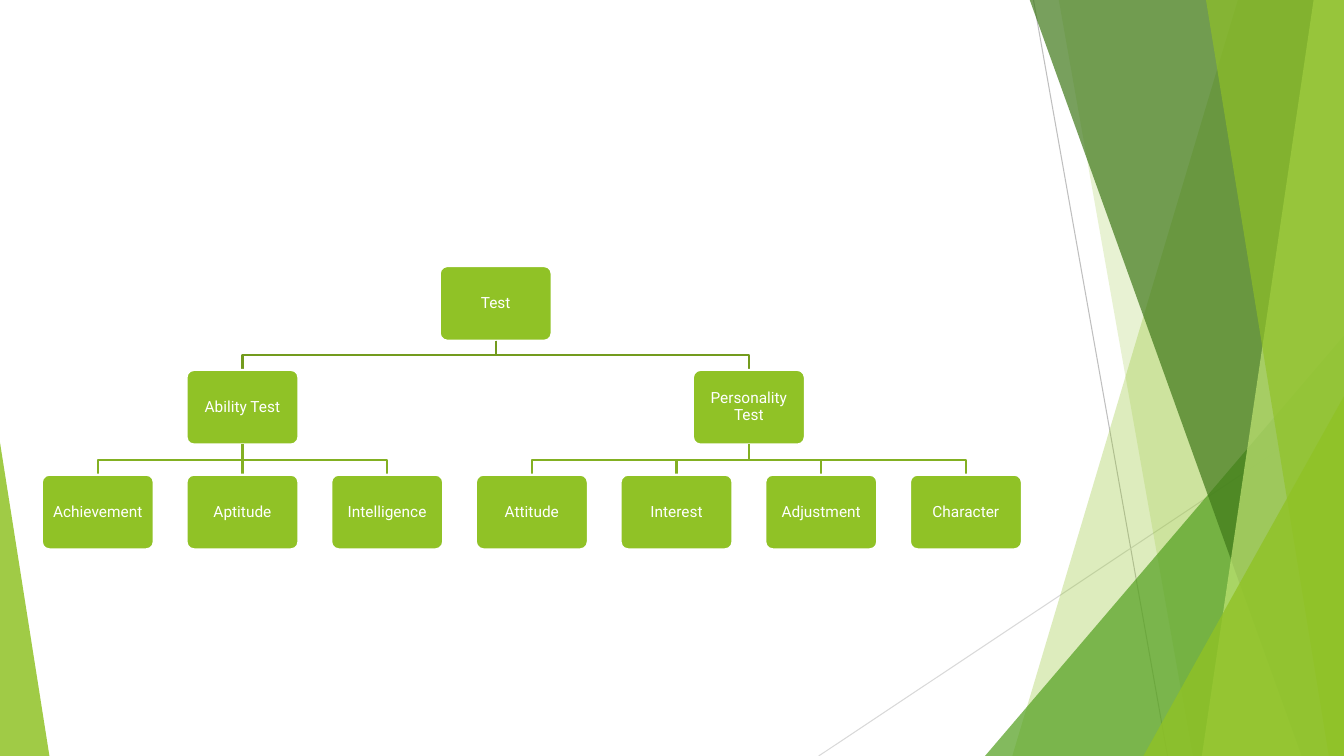
from lxml import etree
from pptx import Presentation
from pptx.dml.color import RGBColor
from pptx.enum.shapes import MSO_CONNECTOR, MSO_SHAPE
from pptx.enum.text import MSO_ANCHOR, PP_ALIGN
from pptx.oxml.ns import qn
from pptx.util import Inches, Pt

STRAIGHT = MSO_CONNECTOR.STRAIGHT
TRIANGLE = MSO_SHAPE.ISOSCELES_TRIANGLE
ROUNDED = MSO_SHAPE.ROUNDED_RECTANGLE
MIDDLE = MSO_ANCHOR.MIDDLE
CENTER = PP_ALIGN.CENTER

COLORS = {
    "lime": "90C226", "green": "54A021", "forest": "3F7819", "pale": "C0E474",
    "white": "FFFFFF", "gray": "BFBFBF", "silver": "D9D9D9",
    "upper_branch": "739B1E", "lower_branch": "83B022",
}
TREE = ("Test", [
    ("Ability Test", [("Achievement", []), ("Aptitude", []), ("Intelligence", [])]),
    ("Personality Test", [("Attitude", []), ("Interest", []),
                          ("Adjustment", []), ("Character", [])]),
])
BRANCH_COLORS = ["upper_branch", "lower_branch"]
ROW_TOPS = [2.64, 3.67, 4.71]
FIRST_LEAF, LAST_LEAF, LEAF_COUNT = 0.97, 9.58, 7
BOX_WIDTH, BOX_HEIGHT = 1.11, 0.74
WIDTH, HEIGHT = 13.33, 7.5

THIN_LINES = [((10.25, 0), (11.58, HEIGHT), "gray"), ((WIDTH, 4.03), (8.12, HEIGHT), "silver")]
DECORATION = [
    ("band", (12.28, 10.04), "lime", 30),
    ("band", (10.5, 11.83), "lime", 20),
    ("triangle", (9.77, 3.33, 3.56, 1), "green", 72),
    ("band", (10.21, 12.91), "forest", 70),
    ("band", (13.03, 11.92), "pale", 70),
    ("band", (11.96, 13.18), "lime", 65),
    ("triangle", (11.34, 3.93, 1.99, 1), "lime", 80),
    ("triangle", (0, 4.39, 0.49, 0), "lime", 85),
]


def color(name):
    return RGBColor.from_string(COLORS[name])


def fill_shape(shape, name, opacity=100):
    shape.shadow.inherit = False
    shape.fill.solid()
    shape.fill.fore_color.rgb = color(name)
    if opacity < 100:
        srgb = shape.fill._xPr.find(".//" + qn("a:srgbClr"))
        etree.SubElement(srgb, qn("a:alpha")).set("val", str(opacity * 1000))


def set_line(shape, name, points):
    shape.line.color.rgb = color(name)
    shape.line.width = Pt(points)


def add_line(slide, start, end, name, points):
    line = slide.shapes.add_connector(STRAIGHT, *[Inches(value) for value in (*start, *end)])
    set_line(line, name, points)
    etree.SubElement(line._element.spPr, qn("a:effectLst"))
    return line


def add_path(slide, points, close):
    points = [(Inches(x), Inches(y)) for x, y in points]
    builder = slide.shapes.build_freeform(*points[0])
    builder.add_line_segments(points[1:], close=close)
    return builder.convert_to_shape()


def add_decoration(slide):
    for start, end, name in THIN_LINES:
        add_line(slide, start, end, name, 0.75)
    for kind, geometry, name, opacity in DECORATION:
        if kind == "band":
            top_x, bottom_x = geometry
            corners = [(top_x, -0.01), (WIDTH, -0.01), (WIDTH, HEIGHT), (bottom_x, HEIGHT)]
            shape = add_path(slide, corners, True)
        else:
            left, top, width, apex = geometry
            shape = slide.shapes.add_shape(
                TRIANGLE, Inches(left), Inches(top), Inches(width), Inches(HEIGHT - top))
            shape.adjustments[0] = apex
        fill_shape(shape, name, opacity)
        shape.line.fill.background()


def add_box(slide, label, center, top):
    box = slide.shapes.add_shape(ROUNDED, Inches(center - BOX_WIDTH / 2), Inches(top),
                                 Inches(BOX_WIDTH), Inches(BOX_HEIGHT))
    box.adjustments[0] = 0.1
    fill_shape(box, "lime")
    set_line(box, "white", 1.5)
    frame = box.text_frame
    frame.word_wrap = True
    frame.vertical_anchor = MIDDLE
    frame.margin_left = frame.margin_right = Inches(0.07)
    frame.margin_top = frame.margin_bottom = Inches(0.07)
    paragraph = frame.paragraphs[0]
    paragraph.alignment = CENTER
    paragraph.line_spacing = 0.9
    run = paragraph.add_run()
    run.text = label
    run.font.name = "Roboto"
    run.font.size = Pt(11)
    run.font.color.rgb = color("white")
    return box


def place(node, leaf_centers):
    label, children = node
    placed = [place(child, leaf_centers) for child in children]
    center = (placed[0][1] + placed[-1][1]) / 2 if placed else next(leaf_centers)
    return label, center, placed


def draw_node(slide, node, level=0):
    label, center, children = node
    box = add_box(slide, label, center, ROW_TOPS[level])
    bottom = ROW_TOPS[level] + BOX_HEIGHT
    for child in children:
        child_center, child_top = child[1], ROW_TOPS[level + 1]
        name = BRANCH_COLORS[level]
        if abs(child_center - center) < 0.01:
            line = add_line(slide, (center, bottom), (child_center, child_top), name, 1.5)
            child_box = draw_node(slide, child, level + 1)
            line.begin_connect(box, 2)
            line.end_connect(child_box, 0)
        else:
            middle = (bottom + child_top) / 2
            branch = add_path(slide, [(center, bottom), (center, middle),
                                      (child_center, middle), (child_center, child_top)], False)
            branch.shadow.inherit = False
            branch.fill.background()
            set_line(branch, name, 1.5)
            draw_node(slide, child, level + 1)
    return box


def main():
    presentation = Presentation()
    presentation.slide_width = Inches(WIDTH)
    presentation.slide_height = Inches(HEIGHT)
    slide = presentation.slides.add_slide(presentation.slide_layouts[6])
    add_decoration(slide)
    pitch = (LAST_LEAF - FIRST_LEAF) / (LEAF_COUNT - 1)
    leaf_centers = iter([FIRST_LEAF + pitch * index for index in range(LEAF_COUNT)])
    draw_node(slide, place(TREE, leaf_centers))
    presentation.save("out.pptx")


if __name__ == "__main__":
    main()
